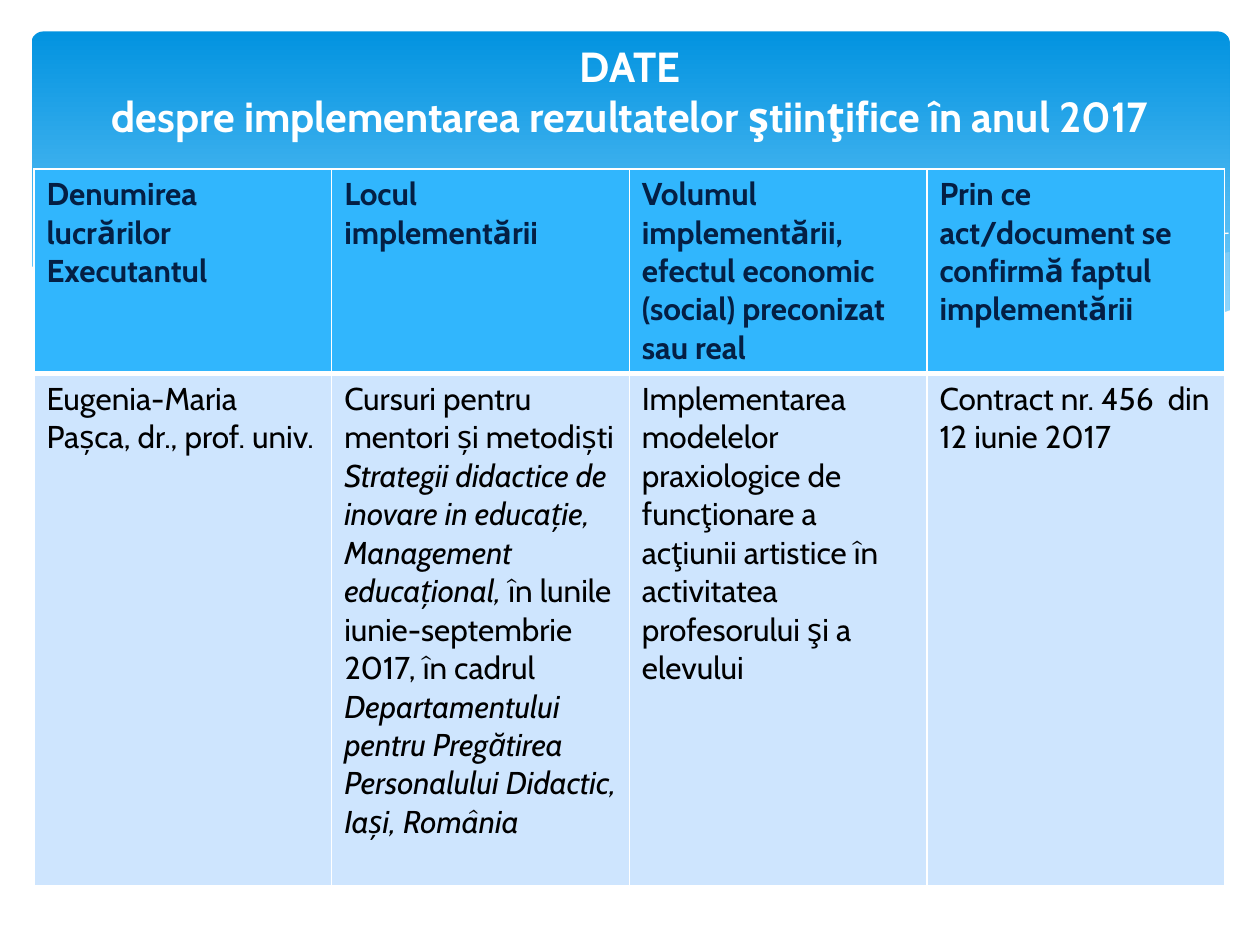
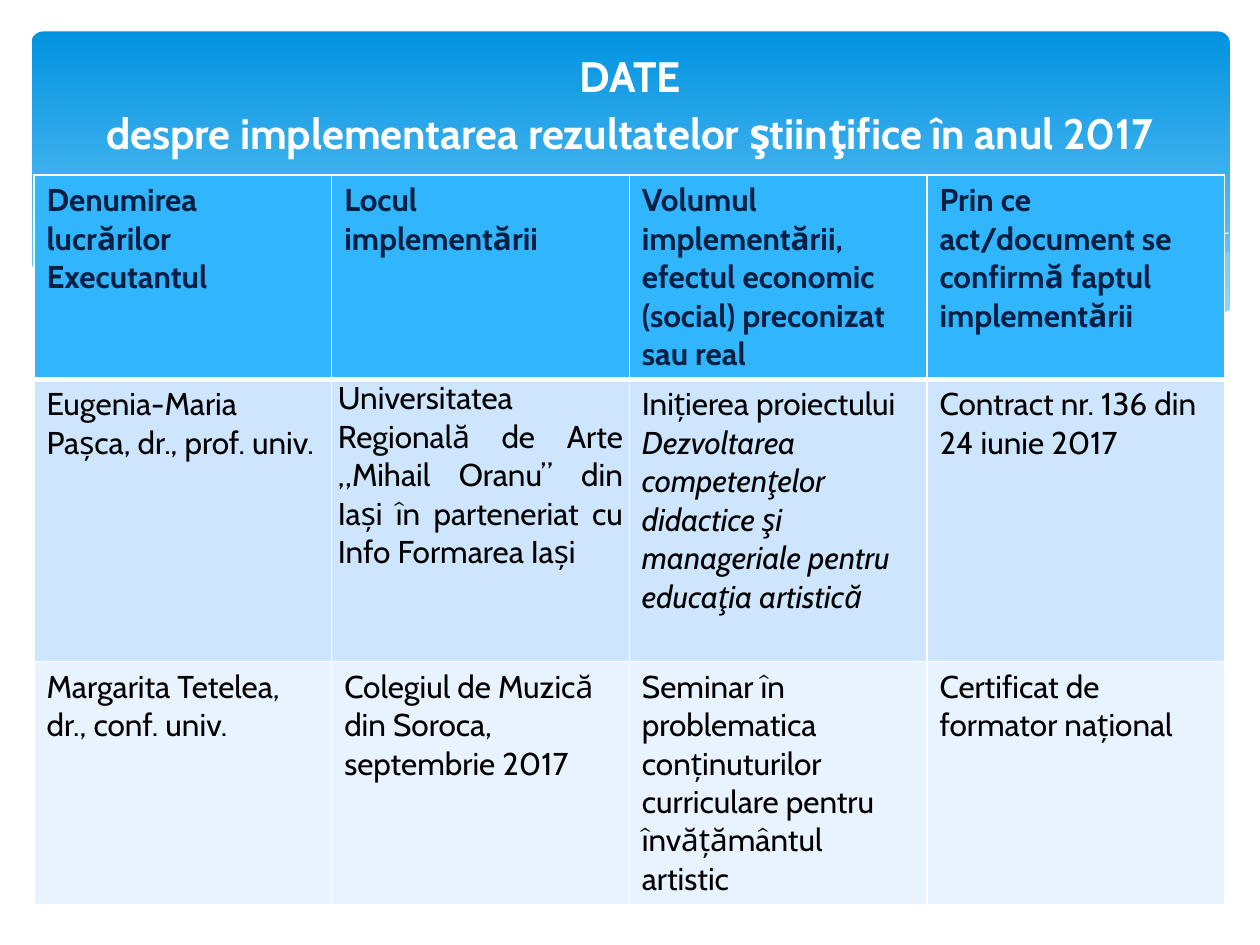
"""Build two slides of tables on putting research results to use in 2017."""
from dataclasses import dataclass
from typing import NamedTuple, Optional

from lxml.etree import SubElement
from pptx import Presentation
from pptx.dml.color import RGBColor
from pptx.enum.shapes import MSO_SHAPE
from pptx.enum.text import MSO_ANCHOR, PP_ALIGN
from pptx.oxml import parse_xml
from pptx.oxml.ns import nsdecls, qn
from pptx.util import Inches, Pt


@dataclass(frozen=True)
class Theme:
    """Hold the shared colours, font and type sizes."""
    font: str = "Cabin"
    white: str = "FFFFFF"
    black: str = "000000"
    navy: str = "041F44"
    head: str = "31B6FD"
    bands: tuple = ("CEE5FE", "E8F3FF")
    sky: tuple = ("0293E0", "83D3FE")
    mist: str = "C6E7FC"
    body: float = 18
    thin: float = 1
    thick: float = 3


class Wave(NamedTuple):
    """Describe one curve of the title band, filled or drawn as a line."""
    points: tuple
    fill: Optional[str] = None
    alpha: int = 100


class Cell(NamedTuple):
    """Describe a table cell with its own alignment and margins."""
    text: str
    align: PP_ALIGN = PP_ALIGN.LEFT
    side: float = 0.1
    top: float = 0.05


class Page(NamedTuple):
    """Describe one slide: its title place, table place and body rows."""
    title_top: float
    title_high: float
    size: float
    gap: float
    table_top: float
    highs: tuple
    rows: tuple


THEME = Theme()
TITLE = "DATE\ndespre implementarea rezultatelor ştiinţifice în anul 2017"
LEFT, WIDE = 0.27, 9.45

HEADS = (
    Cell("Denumirea lucrărilor\nExecutantul"),
    Cell("Locul implementării"),
    Cell("Volumul implementării, efectul economic (social) preconizat sau real"),
    Cell("Prin ce act/document se confirmă faptul implementării"),
)

WAVES = (
    Wave(((9.76, 2), (9.48, 2.04), (9.06, 2.13), (8.61, 2.23), (8.05, 2.37),
          (7.29, 2.53), (6.61, 2.65), (7.05, 2.71), (7.57, 2.76), (8.03, 2.78),
          (8.54, 2.76), (8.97, 2.7), (9.35, 2.62), (9.76, 2.47)), THEME.mist, 29),
    Wave(((8.93, 2.73), (8.37, 2.65), (7.75, 2.54), (7.06, 2.4), (6.29, 2.22),
          (5.69, 2.08), (5.14, 1.98), (4.65, 1.91), (4.2, 1.87), (3.61, 1.85),
          (3.13, 1.88), (2.86, 1.91), (3.42, 1.99), (4.04, 2.11), (4.91, 2.32),
          (5.66, 2.48), (6.34, 2.61), (6.95, 2.7), (7.48, 2.76), (8.07, 2.78),
          (8.57, 2.77), (8.93, 2.73)), THEME.mist, 40),
    Wave(((3.09, 1.95), (3.44, 1.9), (4.01, 1.87), (4.5, 1.88), (5.1, 1.92),
          (5.82, 2), (6.65, 2.13), (7.6, 2.33), (8.31, 2.51), (9.07, 2.72))),
    Wave(((6.13, 2.57), (6.95, 2.35), (7.76, 2.16), (8.36, 2.04), (8.95, 1.94),
          (9.38, 1.88), (9.75, 1.85))),
    Wave(((9.77, 2.46), (9.4, 2.59), (8.99, 2.69), (8.5, 2.75), (8.09, 2.77),
          (7.44, 2.74), (6.68, 2.65), (5.79, 2.5), (5.03, 2.33), (4.18, 2.13),
          (3.4, 1.97), (2.71, 1.88), (2.11, 1.84), (1.61, 1.84), (1.06, 1.89),
          (0.67, 1.97), (0.4, 2.05), (0.23, 2.13), (0.23, 3.29), (9.77, 3.29)),
         THEME.white),
)

PAGES = (
    Page(0.37, 0.7, 24, 0, 1.34, (1.62, 4.06), (
        (Cell("Eugenia-Maria Pașca, dr., prof. univ."),
         Cell("Cursuri pentru mentori și metodiști *Strategii didactice de inovare "
              "in educație, Management educațional,* în lunile iunie-septembrie "
              "2017, în cadrul *Departamentului pentru Pregătirea Personalului "
              "Didactic, Iași, România*"),
         Cell("Implementarea modelelor praxiologice de funcţionare a acţiunii "
              "artistice în activitatea profesorului şi a elevului"),
         Cell("Contract nr. 456  din 12 iunie 2017")),
    )),
    Page(0.39, 0.87, 24.3, 3, 1.39, (1.62, 2.24, 1.93), (
        (Cell("Eugenia-Maria Pașca, dr., prof. univ."),
         Cell("Universitatea Regională de Arte „Mihail Oranu” din Iași în "
              "parteneriat cu Info Formarea Iași", PP_ALIGN.JUSTIFY, 0.05, 0),
         Cell("Inițierea proiectului *Dezvoltarea competenţelor didactice şi "
              "manageriale pentru educaţia artistică*"),
         Cell("Contract nr. 136 din 24 iunie 2017")),
        (Cell("Margarita Tetelea,\ndr., conf. univ."),
         Cell("Colegiul de Muzică din Soroca, septembrie 2017"),
         Cell("Seminar în problematica conținuturilor curriculare pentru "
              "învățământul artistic"),
         Cell("Certificat de formator național")),
    )),
)


def tint(code: str) -> RGBColor:
    """Turn a hex code into a colour."""
    return RGBColor.from_string(code)


def write(frame, text: str, *, size: float = THEME.body, color: str = THEME.black,
          bold: bool = False, align: PP_ALIGN = PP_ALIGN.LEFT, gap: float = 0) -> None:
    """Fill a frame with lines of text, where stars enclose italics."""
    frame.word_wrap = True
    for row, line in enumerate(text.split("\n")):
        para = frame.add_paragraph() if row else frame.paragraphs[0]
        para.alignment = align
        para.space_before = Pt(gap if row else 0)
        for part, words in enumerate(line.split("*")):
            if words:
                run = para.add_run()
                run.text = words
                font = run.font
                font.name, font.size = THEME.font, Pt(size)
                font.bold, font.italic = bold, part % 2 == 1
                font.color.rgb = tint(color)


def draw_wave(slide, wave: Wave) -> None:
    """Draw one curve through its points."""
    spots = [(Inches(x), Inches(y)) for x, y in wave.points]
    pen = slide.shapes.build_freeform(*spots[0])
    pen.add_line_segments(spots[1:], close=wave.fill is not None)
    shape = pen.convert_to_shape()
    shape.shadow.inherit = False
    if wave.fill is None:
        shape.fill.background()
        shape.line.color.rgb = tint(THEME.white)
        shape.line.width = Pt(0)
        return
    shape.line.fill.background()
    shape.fill.solid()
    shape.fill.fore_color.rgb = tint(wave.fill)
    if wave.alpha < 100:
        color = shape.fill._xPr.find(qn("a:solidFill"))[0]
        SubElement(color, qn("a:alpha"), val=str(wave.alpha * 1000))


def draw_band(slide) -> None:
    """Draw the blue band with its waves."""
    band = slide.shapes.add_shape(MSO_SHAPE.ROUNDED_RECTANGLE, Inches(0.25),
                                  Inches(0.25), Inches(9.51), Inches(2.7))
    band.adjustments[0] = 0.034
    band.shadow.inherit = False
    band.line.fill.background()
    band.fill.gradient()
    band.fill.gradient_angle = 270
    for stop, code, place in zip(band.fill.gradient_stops, THEME.sky, (0, 0.9)):
        stop.color.rgb = tint(code)
        stop.position = place
    for wave in WAVES:
        draw_wave(slide, wave)


def edge(cell, top: float, bottom: float) -> None:
    """Give a cell white borders."""
    sides = {"L": THEME.thin, "R": THEME.thin, "T": top, "B": bottom}
    props = cell._tc.get_or_add_tcPr()
    for place, (side, width) in enumerate(sides.items()):
        props.insert(place, parse_xml(
            f'<a:ln{side} {nsdecls("a")} w="{Pt(width)}"><a:solidFill>'
            f'<a:srgbClr val="{THEME.white}"/></a:solidFill></a:ln{side}>'))


def draw_table(slide, page: Page) -> None:
    """Draw the table with its header row and body rows."""
    rows = (HEADS, *page.rows)
    table = slide.shapes.add_table(
        len(rows), len(HEADS), Inches(LEFT), Inches(page.table_top),
        Inches(WIDE), Inches(sum(page.highs))).table
    table.horz_banding = False
    for column in table.columns:
        column.width = Inches(WIDE / len(HEADS))
    for r, (row, high) in enumerate(zip(rows, page.highs)):
        table.rows[r].height = Inches(high)
        for c, item in enumerate(row):
            cell = table.cell(r, c)
            cell.margin_left = cell.margin_right = Inches(item.side)
            cell.margin_top = cell.margin_bottom = Inches(item.top)
            cell.fill.solid()
            cell.fill.fore_color.rgb = tint(THEME.bands[(r - 1) % 2] if r else THEME.head)
            edge(cell, THEME.thick if r == 1 else THEME.thin,
                 THEME.thin if r else THEME.thick)
            write(cell.text_frame, item.text, bold=r == 0, align=item.align,
                  color=THEME.black if r else THEME.navy)


def draw_title(slide, page: Page) -> None:
    """Write the title over the band."""
    box = slide.shapes.add_textbox(Inches(0.5), Inches(page.title_top),
                                   Inches(9), Inches(page.title_high))
    box.text_frame.vertical_anchor = MSO_ANCHOR.MIDDLE
    write(box.text_frame, TITLE, size=page.size, color=THEME.white, bold=True,
          align=PP_ALIGN.CENTER, gap=page.gap)


def main() -> None:
    """Build and save the deck."""
    deck = Presentation()
    deck.slide_width, deck.slide_height = Inches(10), Inches(7.5)
    for page in PAGES:
        slide = deck.slides.add_slide(deck.slide_layouts[6])
        draw_band(slide)
        draw_table(slide, page)
        draw_title(slide, page)
    deck.save("out.pptx")


if __name__ == "__main__":
    main()
